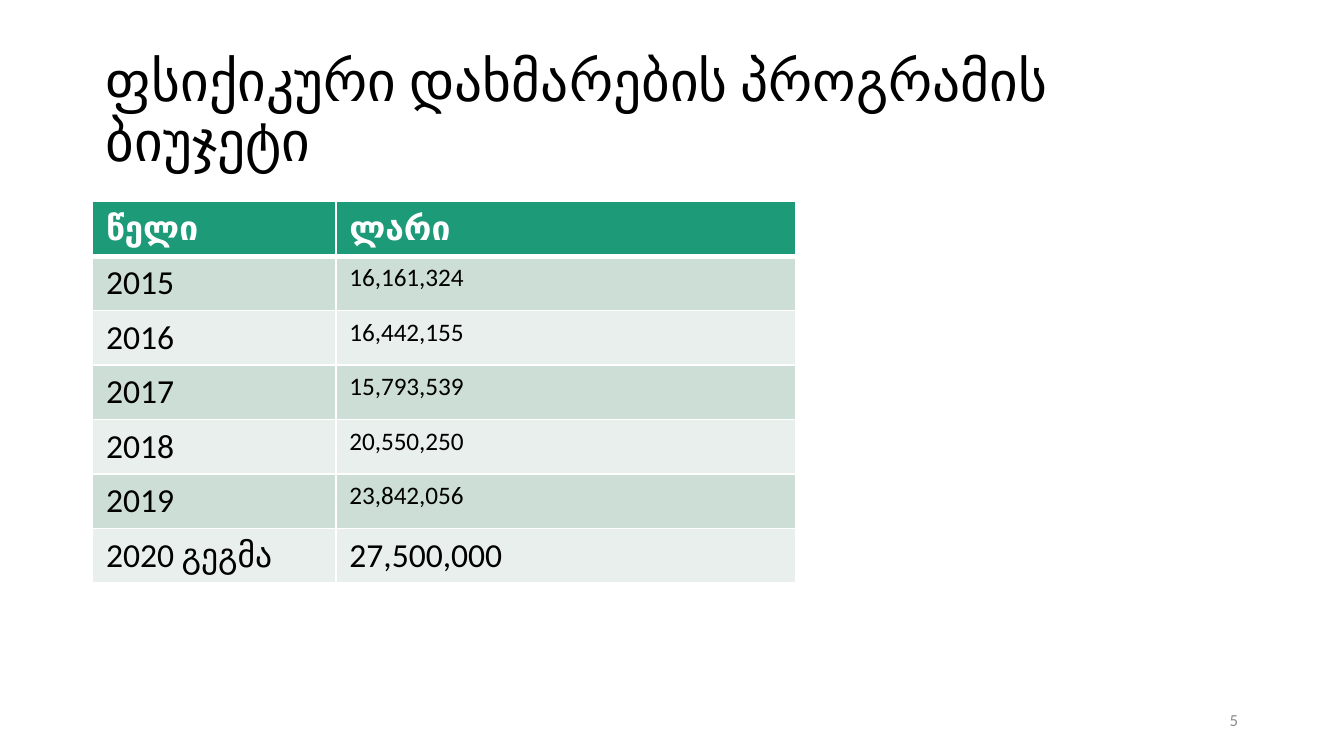
import pptx
import pptx.dml.color
import pptx.enum.text
import pptx.oxml
import pptx.oxml.ns
import pptx.util
from pptx.util import Cm

COLORS = {
    "text": "000000",
    "white": "FFFFFF",
    "header": "1D9A78",
    "dark_band": "CDDED6",
    "light_band": "E8EFEC",
    "number": "8C8C8C",
}
ALIGN = pptx.enum.text.PP_ALIGN
MIDDLE = pptx.enum.text.MSO_ANCHOR.MIDDLE


def write(frame, text, size=18, color="text", bold=False, align=ALIGN.LEFT, spacing=1.0):
    frame.word_wrap = True
    para = frame.paragraphs[0]
    para.alignment = align
    para.line_spacing = spacing
    span = para.add_run()
    span.text = text
    span.font.name = "Calibri"
    span.font.size = pptx.util.Pt(size)
    span.font.bold = bold
    span.font.color.rgb = pptx.dml.color.RGBColor.from_string(COLORS[color])


def set_borders(cell, bottom):
    properties = cell._tc.get_or_add_tcPr()
    widths = {"lnL": 1, "lnR": 1, "lnT": 1, "lnB": bottom}
    for position, (side, width) in enumerate(widths.items()):
        line = pptx.oxml.parse_xml(
            f'<a:{side} {pptx.oxml.ns.nsdecls("a")} w="{pptx.util.Pt(width)}">'
            f'<a:solidFill><a:srgbClr val="{COLORS["white"]}"/></a:solidFill></a:{side}>'
        )
        properties.insert(position, line)


deck = pptx.Presentation()
deck.slide_width = Cm(25.4)
deck.slide_height = Cm(14.29)
page = deck.slides.add_slide(deck.slide_layouts[6])

title = page.shapes.add_textbox(Cm(1.75), Cm(0.76), Cm(21.9), Cm(2.77))
title.text_frame.vertical_anchor = MIDDLE
write(title.text_frame, "ფსიქიკური დახმარების პროგრამის ბიუჯეტი", size=29.7, spacing=0.9)

budget = [
    ("წელი", "ლარი"),
    ("2015", "16,161,324"),
    ("2016", "16,442,155"),
    ("2017", "15,793,539"),
    ("2018", "20,550,250"),
    ("2019", "23,842,056"),
    ("2020 გეგმა", "27,500,000"),
]
row_height = Cm(1.03)
table = page.shapes.add_table(
    len(budget), 2, Cm(1.75), Cm(3.81), Cm(13.29), row_height * len(budget)
).table
table.columns[0].width = Cm(4.6)
table.columns[1].width = Cm(8.69)

for row, values in enumerate(budget):
    table.rows[row].height = row_height
    header = row == 0
    plan = row == len(budget) - 1
    band = "header" if header else "dark_band" if row % 2 else "light_band"
    for column, value in enumerate(values):
        cell = table.cell(row, column)
        cell.fill.solid()
        cell.fill.fore_color.rgb = pptx.dml.color.RGBColor.from_string(COLORS[band])
        set_borders(cell, bottom=3 if header else 1)
        write(
            cell.text_frame,
            value,
            size=18 if header or plan or column == 0 else 13.5,
            color="white" if header else "text",
            bold=header,
        )

number = page.shapes.add_textbox(Cm(17.93), Cm(13.23), Cm(5.72), Cm(0.76))
number.text_frame.vertical_anchor = MIDDLE
write(number.text_frame, "5", size=9, color="number", align=ALIGN.RIGHT)

deck.save("out.pptx")
